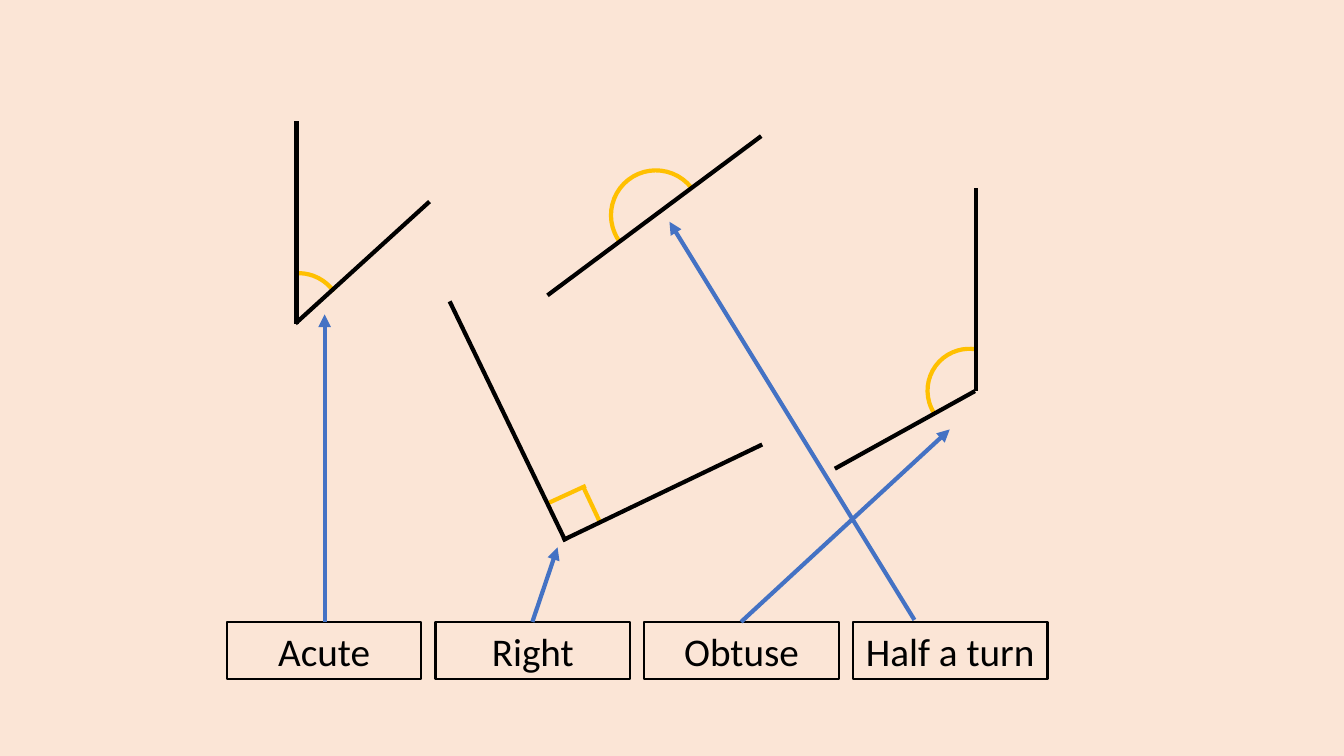
from dataclasses import dataclass

from lxml import etree
from pptx import Presentation
from pptx import util as u
from pptx.dml.color import RGBColor
from pptx.enum import shapes, text
from pptx.oxml.ns import qn

PX = 9144  # EMU per px, 100 px to the inch


@dataclass(frozen=True)
class Theme:
    background: str = "FBE5D6"
    ink: str = "000000"
    mark: str = "FFC000"
    arrow: str = "4472C4"
    font: str = "Calibri"
    label_size: int = 28
    thick: float = 3
    border: float = 1.5


THEME = Theme()

# Each angle: box, arms and square-corner marks as line ends inside the box,
# and an arc as (left, top, size, rotation, start, end) in px and degrees.
ANGLES = [
    dict(box=(293, 120, 133, 201),
         arms=[(1, 201, 1, 0), (0, 201, 133, 80)],
         arc=(-40, 151, 86, 20.1, 247.5, 304.6)),
    dict(box=(543, 135, 212, 158),
         arms=[(0, 158, 212, 0)],
         arc=(63, 34, 89, 306.9, 198.8, 15)),
    dict(box=(446, 299, 310, 238),
         arms=[(112, 237, 310, 142), (115, 238, 0, 0)],
         corner=[(98, 200, 135, 183), (149, 219, 132, 183)]),
    dict(box=(828, 187, 140, 278),
         arms=[(140, 201, 140, 0), (139, 201, 0, 278)],
         arc=(92, 159, 83, 283.7, 222.3, 355.3)),
]

# Label, and the start and tip of its arrow on the slide
LABELS = [
    ("Acute", (322, 617), (322, 312)),
    ("Right", (528, 617), (553, 543)),
    ("Obtuse", (735, 617), (942, 426)),
    ("Half a turn", (907, 615), (664, 220)),
]
LABEL_ROW = (225, 617, 814, 57)
LABEL_GAP = 14


def px(*lengths):
    return [u.Emu(n * PX) for n in lengths]


def style_line(line, color, width):
    line.color.rgb = RGBColor.from_string(color)
    line.width = u.Pt(width)


def add_line(slide, ends, color, arrow=False):
    c = slide.shapes.add_connector(shapes.MSO_CONNECTOR.STRAIGHT, *px(*ends))
    style_line(c.line, color, THEME.thick)
    if arrow:
        etree.SubElement(c.line._get_or_add_ln(), qn("a:tailEnd"), type="triangle")
    etree.SubElement(c._element.spPr, qn("a:effectLst"))


def add_outline(slide, preset, box, color, width):
    sp = slide.shapes.add_shape(preset, *px(*box))
    sp.shadow.inherit = False
    sp.fill.background()
    style_line(sp.line, color, width)
    return sp


def draw_angle(slide, box, arms, arc=None, corner=()):
    x, y = box[:2]
    # Angle mark: an arc or a square corner
    if arc:
        left, top, size, rotation, *angles = arc
        sp = add_outline(slide, shapes.MSO_SHAPE.ARC,
                         (x + left, y + top, size, size), THEME.mark, THEME.thick)
        sp.rotation = rotation
        for i, degrees in enumerate(angles):
            sp.adjustments[i] = degrees * 0.6  # 60000 units a degree, over 100000
    # Marks lie behind the arms
    for color, lines in ((THEME.mark, corner), (THEME.ink, arms)):
        for x1, y1, x2, y2 in lines:
            add_line(slide, (x + x1, y + y1, x + x2, y + y2), color)


def draw_label(slide, box, label):
    sp = add_outline(slide, shapes.MSO_SHAPE.RECTANGLE, box, THEME.ink, THEME.border)
    tf = sp.text_frame
    tf.word_wrap = True
    tf.auto_size = text.MSO_AUTO_SIZE.SHAPE_TO_FIT_TEXT
    tf.vertical_anchor = text.MSO_ANCHOR.TOP
    p = tf.paragraphs[0]
    p.alignment = text.PP_ALIGN.CENTER
    r = p.add_run()
    r.text = label
    for name, value in dict(name=THEME.font, size=u.Pt(THEME.label_size)).items():
        setattr(r.font, name, value)
    r.font.color.rgb = RGBColor.from_string(THEME.ink)


def draw_label_row(slide, box, labels):
    x, y, w, h = box
    width = round((w - LABEL_GAP * (len(labels) - 1)) / len(labels))
    for i, (label, start, tip) in enumerate(labels):
        draw_label(slide, (x + i * (width + LABEL_GAP), y, width, h), label)
        add_line(slide, start + tip, THEME.arrow, arrow=True)


def main():
    prs = Presentation()
    prs.slide_width, prs.slide_height = px(1333, 750)
    slide = prs.slides.add_slide(prs.slide_layouts[6])
    fill = slide.background.fill
    fill.solid()
    fill.fore_color.rgb = RGBColor.from_string(THEME.background)

    for angle in ANGLES:
        draw_angle(slide, **angle)
    draw_label_row(slide, LABEL_ROW, LABELS)
    prs.save("out.pptx")


if __name__ == "__main__":
    main()
